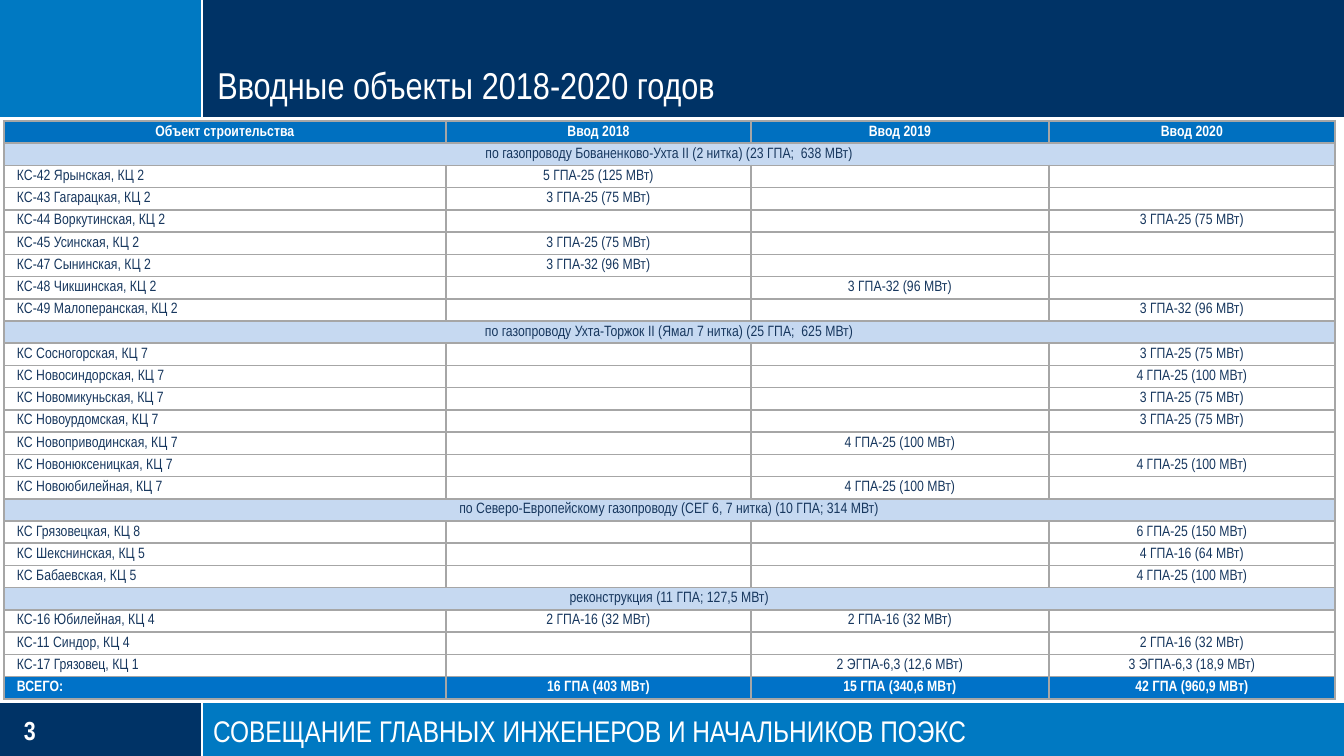
from dataclasses import dataclass

from lxml.etree import SubElement as Sub
from pptx import Presentation
from pptx.dml.color import RGBColor as Rgb
from pptx.enum.shapes import MSO_CONNECTOR as Conn, MSO_SHAPE as Shape
from pptx.enum.text import MSO_ANCHOR as Anchor, MSO_AUTO_SIZE as Fit, PP_ALIGN as Align
from pptx.oxml.ns import qn
from pptx.util import Emu, Pt

WIDE, HIGH = 1344, 756
SCALE = 9144000 / WIDE


@dataclass(frozen=True)
class Theme:
    font: str = "Arial Narrow"
    navy: str = "003366"
    blue: str = "0079C2"
    head: str = "0070C0"
    total: str = "0072C8"
    band: str = "C6D9F1"
    ink: str = "17375E"
    white: str = "FFFFFF"
    grid: str = "A6A6A6"
    title: int = 20
    foot: int = 16
    page: int = 14
    cell: int = 8
    rule: float = 1.25
    edge: int = 1


T = Theme()
COLS = [442, 305, 298, 286]
HEAD = ("Объект строительства", "Ввод 2018", "Ввод 2019", "Ввод 2020")
TOTAL = ("ВСЕГО:", "16 ГПА (403 МВт)", "15 ГПА (340,6 МВт)", "42 ГПА (960,9 МВт)")
PLAN = {
    "по газопроводу Бованенково-Ухта II (2 нитка) (23 ГПА;  638 МВт)": [
        ("КС-42 Ярынская, КЦ 2", "5 ГПА-25 (125 МВт)", "", ""),
        ("КС-43 Гагарацкая, КЦ 2", "3 ГПА-25 (75 МВт)", "", ""),
        ("КС-44 Воркутинская, КЦ 2", "", "", "3 ГПА-25 (75 МВт)"),
        ("КС-45 Усинская, КЦ 2", "3 ГПА-25 (75 МВт)", "", ""),
        ("КС-47 Сынинская, КЦ 2", "3 ГПА-32 (96 МВт)", "", ""),
        ("КС-48 Чикшинская, КЦ 2", "", "3 ГПА-32 (96 МВт)", ""),
        ("КС-49 Малоперанская, КЦ 2", "", "", "3 ГПА-32 (96 МВт)"),
    ],
    "по газопроводу Ухта-Торжок II (Ямал 7 нитка) (25 ГПА;  625 МВт)": [
        ("КС Сосногорская, КЦ 7", "", "", "3 ГПА-25 (75 МВт)"),
        ("КС Новосиндорская, КЦ 7", "", "", "4 ГПА-25 (100 МВт)"),
        ("КС Новомикуньская, КЦ 7", "", "", "3 ГПА-25 (75 МВт)"),
        ("КС Новоурдомская, КЦ 7", "", "", "3 ГПА-25 (75 МВт)"),
        ("КС Новоприводинская, КЦ 7", "", "4 ГПА-25 (100 МВт)", ""),
        ("КС Новонюксеницкая, КЦ 7", "", "", "4 ГПА-25 (100 МВт)"),
        ("КС Новоюбилейная, КЦ 7", "", "4 ГПА-25 (100 МВт)", ""),
    ],
    "по Северо-Европейскому газопроводу (СЕГ 6, 7 нитка) (10 ГПА; 314 МВт)": [
        ("КС Грязовецкая, КЦ 8", "", "", "6 ГПА-25 (150 МВт)"),
        ("КС Шекснинская, КЦ 5", "", "", "4 ГПА-16 (64 МВт)"),
        ("КС Бабаевская, КЦ 5", "", "", "4 ГПА-25 (100 МВт)"),
    ],
    "реконструкция (11 ГПА; 127,5 МВт)": [
        ("КС-16 Юбилейная, КЦ 4", "2 ГПА-16 (32 МВт)", "2 ГПА-16 (32 МВт)", ""),
        ("КС-11 Синдор, КЦ 4", "", "", "2 ГПА-16 (32 МВт)"),
        ("КС-17 Грязовец, КЦ 1", "", "2 ЭГПА-6,3 (12,6 МВт)", "3 ЭГПА-6,3 (18,9 МВт)"),
    ],
}


def px(num):
    return Emu(round(num * SCALE))


def write(frame, text, size, color=T.white, bold=False, align=Align.LEFT):
    para = frame.paragraphs[0]
    para.alignment = align
    if not text:
        # Keeps an empty row as low as a filled one.
        Sub(para._p, qn("a:endParaRPr"), sz=str(size * 100))
        return
    run = para.add_run()
    run.text = text
    font = run.font
    font.name, font.size, font.bold = T.font, Pt(size), bold
    font.color.rgb = Rgb.from_string(color)


def place(shape, x, y, w, h):
    shape.left, shape.top, shape.width, shape.height = map(px, (x, y, w, h))


def label(slide, box, text, size, anchor=Anchor.TOP, inset=None, bold=False):
    frame = slide.shapes.add_textbox(*map(px, box)).text_frame
    frame.word_wrap = True
    frame.vertical_anchor = anchor
    if inset is not None:
        frame.margin_left = frame.margin_right = px(inset)
        frame.margin_top = frame.margin_bottom = px(inset)
    write(frame, text, size, bold=bold)


def bar(slide, box, color):
    shape = slide.shapes.add_shape(Shape.RECTANGLE, *map(px, box))
    shape.shadow.inherit = False
    shape.fill.solid()
    shape.fill.fore_color.rgb = Rgb.from_string(color)
    shape.line.fill.background()


def rule(slide, *ends):
    line = slide.shapes.add_connector(Conn.STRAIGHT, *map(px, ends))
    line.line.color.rgb = Rgb.from_string(T.white)
    line.line.width = Pt(T.rule)
    Sub(line._element.spPr, qn("a:effectLst"))


def split(slide, box, main, side, edge):
    """Draws a strip with a side block and white rules along its edge and seam."""
    x, y, w, h = box
    bar(slide, box, main)
    bar(slide, (x, y, 203, h), side)
    rule(slide, x, edge, x + w, edge)
    rule(slide, x + 202, min(y, edge), x + 202, max(y + h, edge))


def header(slide, box, text):
    x, y, w, h = box
    split(slide, box, T.navy, T.blue, y + h + 1)
    title = slide.shapes.title
    slide.shapes._spTree.append(title._element)
    place(title, x + 204, y + 21, 1077, h - 24)
    frame = title.text_frame
    frame.auto_size = Fit.NONE
    frame.vertical_anchor = Anchor.BOTTOM
    write(frame, text, T.title)


def footer(slide, box, page, text):
    x, y, w, h = box
    split(slide, box, T.blue, T.navy, y - 1)
    label(slide, (x + 24, y + 11, 136, 32), page, T.page,
          anchor=Anchor.MIDDLE, inset=0, bold=True)
    label(slide, (x + 200, y + 3, w - 200, h - 3), text, T.foot)


def style(cell, fill):
    cell.vertical_anchor = Anchor.MIDDLE
    cell.margin_left = cell.margin_right = px(13)
    cell.margin_top = cell.margin_bottom = 0
    props = cell._tc.get_or_add_tcPr()
    for side in "LRTB":
        line = Sub(props, qn(f"a:ln{side}"), w=str(Pt(T.edge)))
        Sub(Sub(line, qn("a:solidFill")), qn("a:srgbClr"), val=T.grid)
    cell.fill.solid()
    cell.fill.fore_color.rgb = Rgb.from_string(fill)


def fill_row(cells, texts, fill, color=T.ink, bold=False, first=Align.LEFT):
    for num, cell in enumerate(cells):
        style(cell, fill)
        if num < len(texts):
            write(cell.text_frame, texts[num], T.cell, color=color, bold=bold,
                  align=Align.CENTER if num else first)


def schedule(slide, box):
    rows = [(HEAD, dict(fill=T.head, color=T.white, bold=True, first=Align.CENTER))]
    for name, sites in PLAN.items():
        rows.append(((name,), dict(fill=T.band, first=Align.CENTER)))
        rows += [(site, dict(fill=T.white)) for site in sites]
    rows.append((TOTAL, dict(fill=T.total, color=T.white, bold=True)))

    table = slide.shapes.add_table(len(rows), len(COLS), *map(px, box)).table
    table.first_row = table.horz_banding = False
    for col, wide in zip(table.columns, COLS):
        col.width = px(wide)
    for row, (texts, look) in zip(table.rows, rows):
        row.height = px(box[3] / len(rows))
        cells = list(row.cells)
        if len(texts) == 1:
            cells[0].merge(cells[-1])
        fill_row(cells, texts, **look)


def main():
    deck = Presentation()
    deck.slide_width, deck.slide_height = px(WIDE), px(HIGH)
    slide = deck.slides.add_slide(deck.slide_layouts[5])
    header(slide, (0, 0, WIDE, 117), "Вводные объекты 2018-2020 годов")
    schedule(slide, (4, 121, sum(COLS), 578))
    footer(slide, (0, 703, WIDE, 53), "3",
           "СОВЕЩАНИЕ ГЛАВНЫХ ИНЖЕНЕРОВ И НАЧАЛЬНИКОВ ПОЭКС")
    deck.save("out.pptx")


if __name__ == "__main__":
    main()
